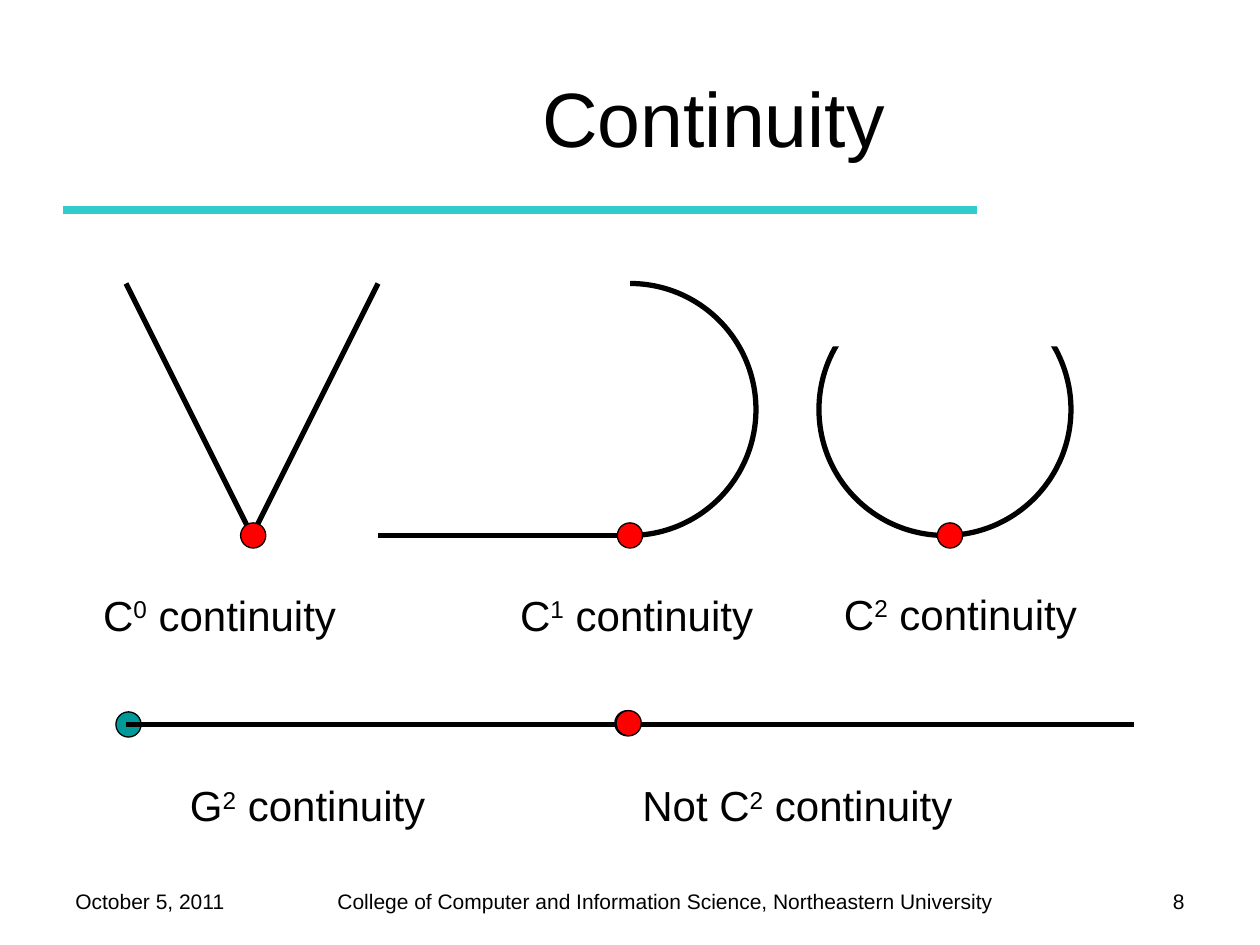
"""Build the slide that compares kinds of curve continuity."""
from lxml.etree import SubElement
from pptx import Presentation
from pptx.dml.color import RGBColor
from pptx.enum.shapes import MSO_CONNECTOR, MSO_SHAPE
from pptx.enum.text import MSO_ANCHOR, PP_ALIGN
from pptx.oxml.ns import qn
from pptx.util import Inches, Pt

COLUMNS, ROWS = 10, 7.5
BLACK, WHITE, RED, TEAL, AQUA = "000000", "FFFFFF", "FF0000", "009999", "33CCCC"
DOT = 0.2

deck = Presentation()
deck.slide_width, deck.slide_height = Inches(COLUMNS), Inches(ROWS)
page = deck.slides.add_slide(deck.slide_layouts[5])


def grid(*cells):
    """Turn columns and rows into slide lengths."""
    return [round(cell * deck.slide_width / COLUMNS) for cell in cells]


def paint(fill, colour):
    """Fill a shape, line or font with one hex colour."""
    fill.solid()
    fill.fore_color.rgb = RGBColor.from_string(colour)


title = page.shapes.title
title.left, title.top, title.width, title.height = grid(1.83, 0.3, 7.67, 1.25)
title.text_frame.text = "Continuity"
title.text_frame.vertical_anchor = MSO_ANCHOR.MIDDLE
heading = title.text_frame.paragraphs[0]
heading.alignment = PP_ALIGN.CENTER
heading.font.name, heading.font.size = "Arial", Pt(44)
paint(heading.font.fill, BLACK)

circles = [(MSO_SHAPE.OVAL, left, 2.25, 2, 2, None, BLACK, 3) for left in (4, 6.5)]
masks = [
    (MSO_SHAPE.RECTANGLE, *area, WHITE, None, 0)
    for area in ((3.75, 2, 1.25, 2.25), (6.25, 2, 2.75, 0.75))
]
teal_dots, red_dots = (
    [(MSO_SHAPE.OVAL, left, top, DOT, DOT, colour, BLACK, 0.75) for left, top in spots]
    for colour, spots in (
        (TEAL, ((0.92, 5.65), (4.88, 5.64))),
        (RED, ((4.89, 5.64), (1.91, 4.15), (4.9, 4.15), (7.44, 4.15))),
    )
)
lines = [
    (MSO_CONNECTOR.STRAIGHT, *ends, None, colour, weight)
    for *ends, colour, weight in (
        (0.5, 1.67, 7.75, 1.67, AQUA, 4.5),
        (1, 5.75, 9, 5.75, BLACK, 3),
        (1, 2.25, 2, 4.25, BLACK, 3),
        (2, 4.25, 3, 2.25, BLACK, 3),
        (3, 4.25, 5, 4.25, BLACK, 3),
    )
]

for kind, *place, inside, outline, weight in teal_dots + circles + masks + lines + red_dots:
    if isinstance(kind, MSO_CONNECTOR):
        figure = page.shapes.add_connector(kind, *grid(*place))
        SubElement(figure._element.spPr, qn("a:effectLst"))
    else:
        figure = page.shapes.add_shape(kind, *grid(*place))
        figure.shadow.inherit = False
        if inside:
            paint(figure.fill, inside)
        else:
            figure.fill.background()
    if outline:
        paint(figure.line.fill, outline)
        figure.line.width = Pt(weight)
    else:
        figure.line.fill.background()

for letter, power, *place in (
    ("C", "0", 0.72, 4.63, 2.14, 0.5),
    ("C", "1", 4.03, 4.63, 2.22, 0.5),
    ("C", "2", 6.6, 4.62, 2.36, 0.5),
    ("G", "2", 1.41, 6.14, 2.13, 0.5),
    ("Not C", "2", 5, 6.14, 2.76, 0.5),
):
    box = page.shapes.add_textbox(*grid(*place))
    box.text_frame.word_wrap = True
    para = box.text_frame.paragraphs[0]
    for words in (letter, power, " continuity"):
        span = para.add_run()
        span.text = words
        span.font.name, span.font.size = "Arial", Pt(24)
        paint(span.font.fill, BLACK)
        if words == power:
            span.font._element.set("baseline", "30000")

for words, alignment, *place in (
    ("October 5, 2011", PP_ALIGN.LEFT, 0.5, 7, 1.75, 0.33),
    ("College of Computer and Information Science, Northeastern University",
     PP_ALIGN.LEFT, 2.58, 7, 5.5, 0.3),
    ("8", PP_ALIGN.RIGHT, 8.67, 7, 0.83, 0.35),
):
    box = page.shapes.add_textbox(*grid(*place))
    box.text_frame.word_wrap = True
    box.text_frame.text = words
    para = box.text_frame.paragraphs[0]
    para.alignment = alignment
    span = para.runs[0]
    span.font.name, span.font.size = "Arial", Pt(12)
    paint(span.font.fill, BLACK)

deck.save("out.pptx")
